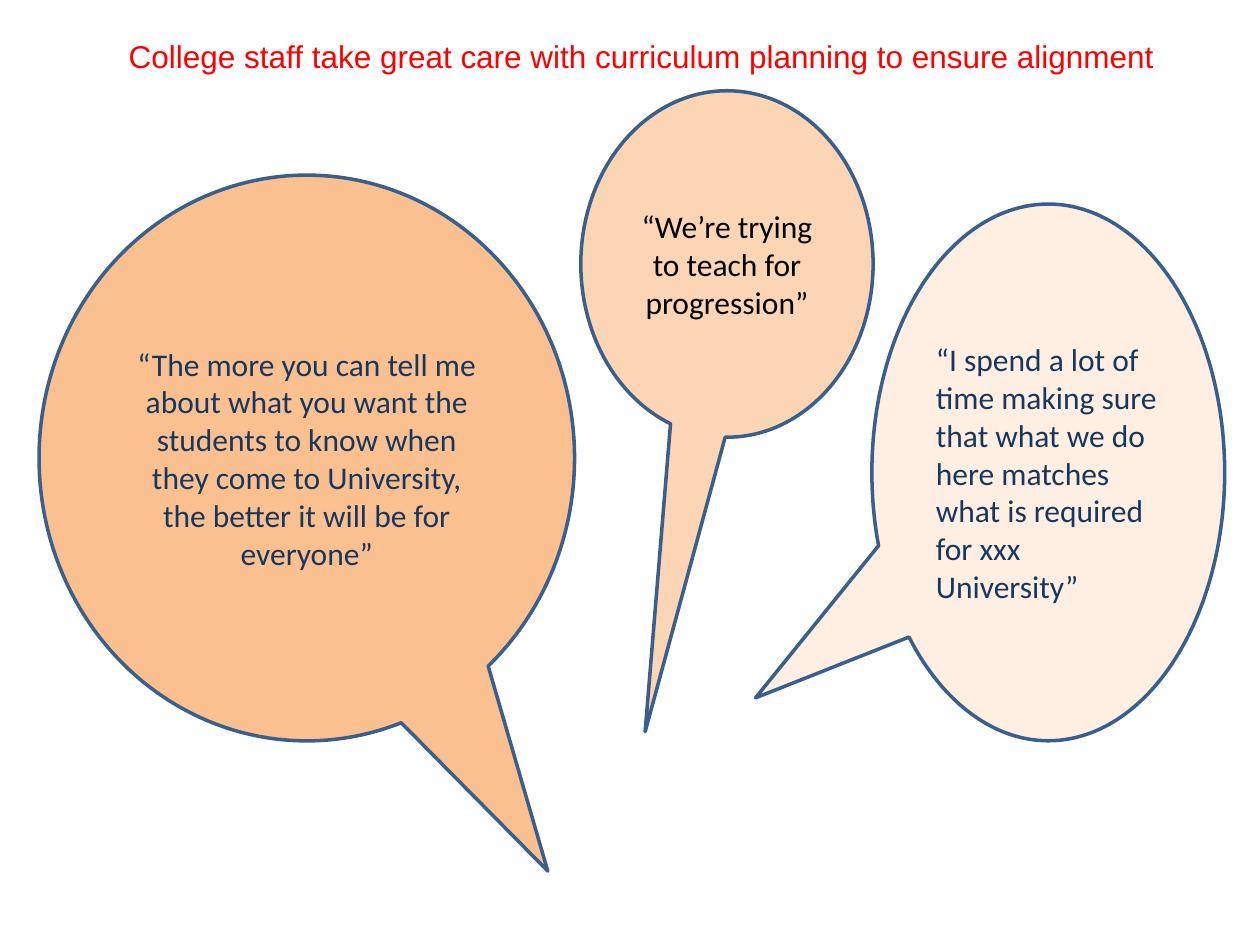
from dataclasses import dataclass

import pptx
import pptx.dml.color
import pptx.enum.shapes
import pptx.enum.text
import pptx.util

Inches = pptx.util.Inches
Pt = pptx.util.Pt
RGBColor = pptx.dml.color.RGBColor
Align = pptx.enum.text.PP_ALIGN

RED = RGBColor(0xFF, 0x00, 0x00)
BLACK = RGBColor(0x00, 0x00, 0x00)
NAVY = RGBColor(0x17, 0x37, 0x5E)
OUTLINE_BLUE = RGBColor(0x3A, 0x5F, 0x8C)
ORANGE = RGBColor(0xFA, 0xC0, 0x90)
PEACH = RGBColor(0xFC, 0xD5, 0xB5)
CREAM = RGBColor(0xFE, 0xEF, 0xE2)


@dataclass(frozen=True)
class Callout:
    """A speech bubble; box is left, top, width, height in inches and
    tail is the tip's offset from the centre as a share of the size."""
    box: tuple[float, float, float, float]
    tail: tuple[float, float]
    fill: RGBColor
    text: str
    color: RGBColor = NAVY
    align: Align = Align.CENTER


CALLOUTS = [
    Callout((6.92, 1.62, 2.8, 4.26), (-0.83, 0.42), CREAM,
            "“I spend a lot of time making sure that what we do\n"
            "here matches what is required\n"
            "for xxx University”", align=Align.LEFT),
    Callout((0.31, 1.39, 4.25, 4.49), (0.45, 0.73), ORANGE,
            "“The more you can tell me about what you want the students to know "
            "when they come to University, the better it will be for everyone”"),
    Callout((4.61, 0.72, 2.32, 2.75), (-0.28, 1.35), PEACH,
            "“We’re trying to teach for progression”", color=BLACK),
]


def write_text(shape, text: str, *, color: RGBColor, font: str = "Calibri",
               size: float = 18, align: Align = Align.CENTER) -> None:
    frame = shape.text_frame
    frame.text = text
    frame.word_wrap = True
    frame.vertical_anchor = pptx.enum.text.MSO_ANCHOR.MIDDLE
    for paragraph in frame.paragraphs:
        paragraph.alignment = align
        paragraph.font.name = font
        paragraph.font.size = Pt(size)
        paragraph.font.color.rgb = color


def draw_callout(slide, callout: Callout) -> None:
    shape = slide.shapes.add_shape(
        pptx.enum.shapes.MSO_SHAPE.OVAL_CALLOUT, *map(Inches, callout.box))
    shape.adjustments[0], shape.adjustments[1] = callout.tail
    shape.shadow.inherit = False
    shape.fill.solid()
    shape.fill.fore_color.rgb = callout.fill
    shape.line.color.rgb = OUTLINE_BLUE
    shape.line.width = Pt(2)
    write_text(shape, callout.text, color=callout.color, align=callout.align)


def main() -> None:
    presentation = pptx.Presentation()
    presentation.slide_width = Inches(10)
    presentation.slide_height = Inches(7.5)
    slide = presentation.slides.add_slide(
        presentation.slide_layouts.get_by_name("Title Only"))

    title = slide.shapes.title
    title.left, title.top = Inches(0.59), Inches(0.29)
    title.width, title.height = Inches(9), Inches(0.31)
    write_text(title, "College staff take great care with curriculum planning "
               "to ensure alignment", color=RED, font="Arial")

    for callout in CALLOUTS:
        draw_callout(slide, callout)
    presentation.save("out.pptx")


if __name__ == "__main__":
    main()
